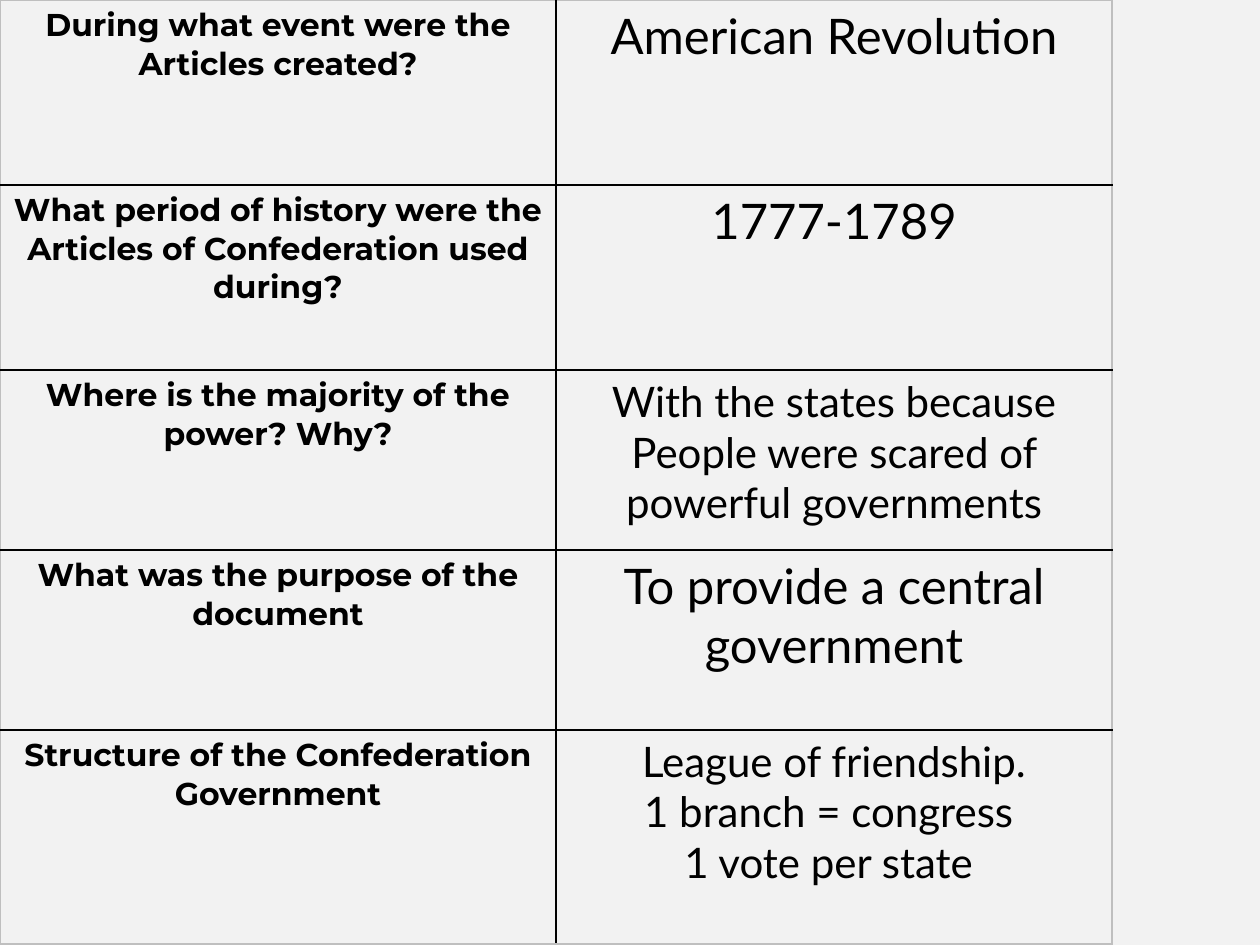
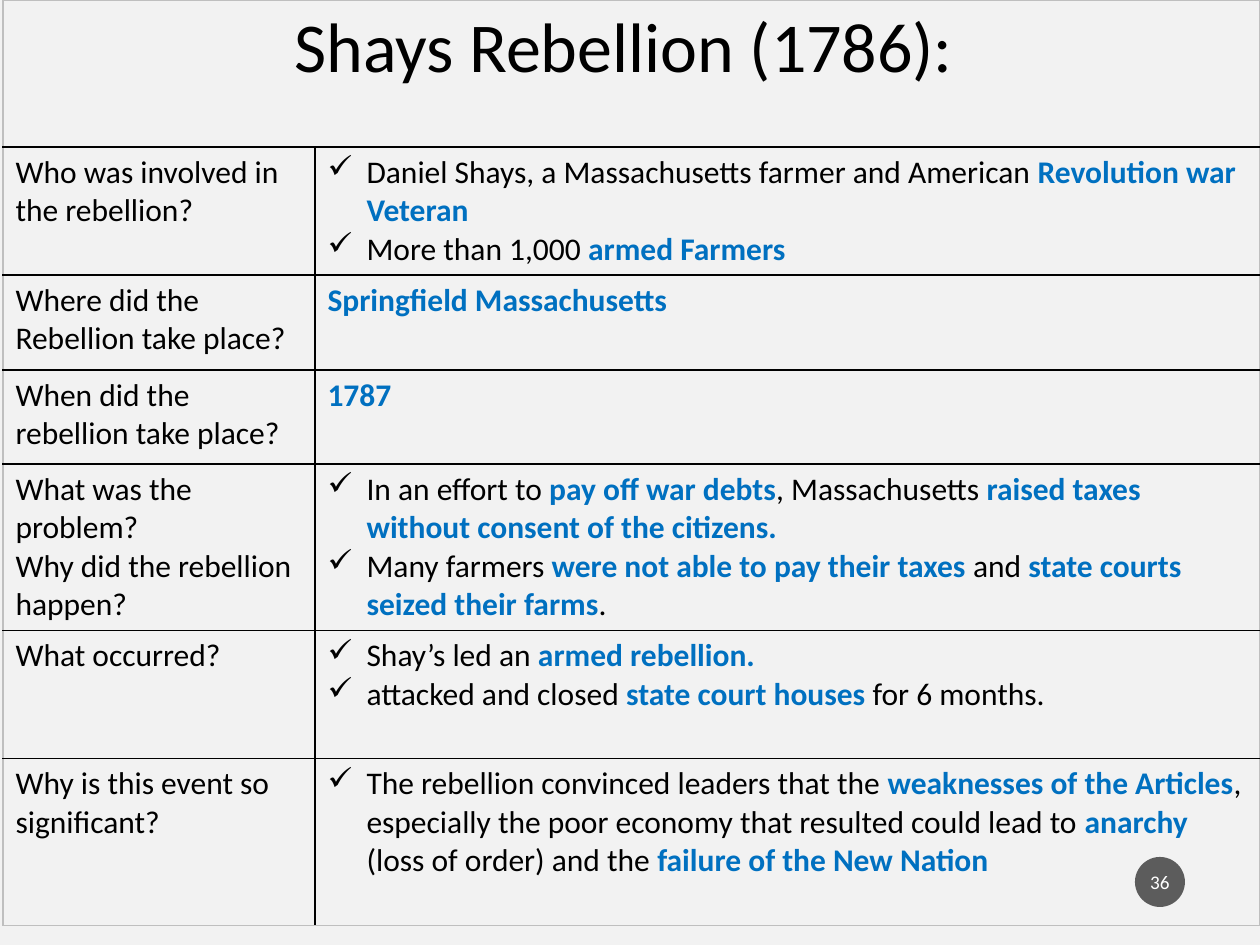
from lxml import etree
from pptx import Presentation
from pptx.dml.color import RGBColor
from pptx.enum.shapes import MSO_SHAPE as Shape
from pptx.enum.text import MSO_ANCHOR as Anchor, PP_ALIGN as Align
from pptx.oxml.ns import qn
from pptx.util import Emu, Pt

PX = 914400 / 126
BLACK = RGBColor(0x00, 0x00, 0x00)
WHITE = RGBColor(0xFF, 0xFF, 0xFF)
BLUE = RGBColor(0x00, 0x70, 0xC0)
PAPER = RGBColor(0xF2, 0xF2, 0xF2)
EDGE = RGBColor(0xBF, 0xBF, 0xBF)
DARK = RGBColor(0x1D, 0x1D, 0x1D)
CHECK = "✓"
HANG = 39

FACTS = [
    ("During what event were the Articles created?", ["American Revolution"], 28),
    ("What period of history were the Articles of Confederation used during?",
     ["1777-1789"], 28),
    ("Where is the majority of the power? Why?",
     ["With the states because People were scared of powerful governments"], 24),
    ("What was the purpose of the document",
     ["To provide a central government"], 28),
    ("Structure of the Confederation Government",
     ["League of friendship.", "1 branch = congress ", "1 vote per state "], 24),
]

# Text between asterisks is a key phrase; a leading check mark makes a bullet.
SHAYS = [
    (["Who was involved in the rebellion?"],
     ["✓Daniel Shays, a Massachusetts farmer and American *Revolution war Veteran*",
      "✓More than 1,000 *armed Farmers*"]),
    (["Where did the Rebellion take place?"], ["*Springfield Massachusetts*"]),
    (["When did the rebellion take place?"], ["*1787*"]),
    (["What was the problem?", "Why did the rebellion happen?"],
     ["✓In an effort to *pay off war debts*, Massachusetts "
      "*raised taxes without consent of the citizens.*",
      "✓Many farmers *were not able to pay their taxes *and "
      "*state courts seized their farms*."]),
    (["What occurred?"],
     ["✓Shay’s led an *armed rebellion.*",
      "✓attacked and closed *state court houses *for 6 months."]),
    (["Why is this event so significant?"],
     ["✓The rebellion convinced leaders that the *weaknesses of the Articles*, "
      "especially the poor economy that resulted could lead to *anarchy* "
      "(loss of order) and the *failure of the New Nation*"]),
]


def px(n):
    return Emu(round(n * PX))


class Deck:
    def __init__(self):
        self.prs = Presentation()
        self.prs.slide_width, self.prs.slide_height = px(1260), px(945)
        self.slide = None

    def page(self):
        self.slide = self.prs.slides.add_slide(self.prs.slide_layouts[6])
        fill = self.slide.background.fill
        fill.solid()
        fill.fore_color.rgb = PAPER

    def text(self, frame, lines, size, font="Calibri", color=BLACK,
             bold=False, align=Align.LEFT):
        for i, line in enumerate(lines):
            para = frame.paragraphs[0] if i == 0 else frame.add_paragraph()
            para.alignment = align
            if line.startswith(CHECK):
                self.bullet(para)
                line = line[1:]
            for j, part in enumerate(line.split("*")):
                if not part:
                    continue
                key = j % 2 == 1
                run = para.add_run()
                run.text = part
                run.font.name = font
                run.font.size = Pt(size)
                run.font.bold = bold or key
                run.font.color.rgb = BLUE if key else color

    def bullet(self, para):
        props = para._p.get_or_add_pPr()
        props.set("marL", str(px(HANG)))
        props.set("indent", str(-px(HANG)))
        etree.SubElement(props, qn("a:buChar")).set("char", CHECK)

    def table(self, left, cols, rows):
        """Add an unfilled table with black inner rules and a grey frame."""
        frame = self.slide.shapes.add_table(
            len(rows), len(cols), px(left), 0, px(sum(cols)), px(sum(rows)))
        grid = frame.table
        grid.first_row = grid.horz_banding = False
        for col, wide in zip(grid.columns, cols):
            col.width = px(wide)
        for row, high in zip(grid.rows, rows):
            row.height = px(high)
        for r in range(len(rows)):
            for c in range(len(cols)):
                cell = grid.cell(r, c)
                cell.fill.background()
                self.rule(cell, {"L": c == 0, "R": c == len(cols) - 1,
                                 "T": r == 0, "B": r == len(rows) - 1})
        return grid

    def rule(self, cell, sides):
        """Draw the four borders; sides tells which lie on the frame."""
        props = cell._tc.get_or_add_tcPr()
        for i, (side, outer) in enumerate(sides.items()):
            old = props.find(qn("a:ln" + side))
            if old is not None:
                props.remove(old)
            line = etree.Element(qn("a:ln" + side), w=str(Pt(1)))
            fill = etree.SubElement(line, qn("a:solidFill"))
            color = EDGE if outer else BLACK
            etree.SubElement(fill, qn("a:srgbClr")).set("val", str(color))
            props.insert(i, line)

    def badge(self, left, top, size, label):
        dot = self.slide.shapes.add_shape(
            Shape.OVAL, px(left), px(top), px(size), px(size))
        dot.shadow.inherit = False
        dot.line.fill.background()
        dot.fill.solid()
        dot.fill.fore_color.rgb = DARK
        tint = dot._element.spPr.find(qn("a:solidFill"))[0]
        etree.SubElement(tint, qn("a:alpha")).set("val", "70000")
        frame = dot.text_frame
        frame.margin_left = frame.margin_right = px(3)
        frame.margin_top = frame.margin_bottom = px(6)
        frame.vertical_anchor = Anchor.MIDDLE
        self.text(frame, [label], 11, color=WHITE, align=Align.CENTER)


def facts(deck):
    deck.page()
    grid = deck.table(0, [556, 556], [185, 185, 180, 180, 214])
    for r, (ask, reply, size) in enumerate(FACTS):
        deck.text(grid.cell(r, 0).text_frame, [ask], 18, "Montserrat",
                  bold=True, align=Align.CENTER)
        deck.text(grid.cell(r, 1).text_frame, reply, size, "Lato",
                  align=Align.CENTER)


def shays(deck):
    deck.page()
    deck.badge(1135, 857, 50, "36")
    grid = deck.table(3, [312, 945], [147, 128, 95, 94, 166, 128, 167])
    head = grid.cell(0, 0)
    head.merge(grid.cell(0, 1))
    deck.rule(head, {"L": True, "R": True, "T": True, "B": False})
    deck.text(head.text_frame, ["Shays Rebellion (1786): "], 40,
              align=Align.CENTER)
    for r, pair in enumerate(SHAYS, 1):
        for c, lines in enumerate(pair):
            deck.text(grid.cell(r, c).text_frame, lines, 18)


def main():
    deck = Deck()
    facts(deck)
    shays(deck)
    deck.prs.save("out.pptx")


if __name__ == "__main__":
    main()
